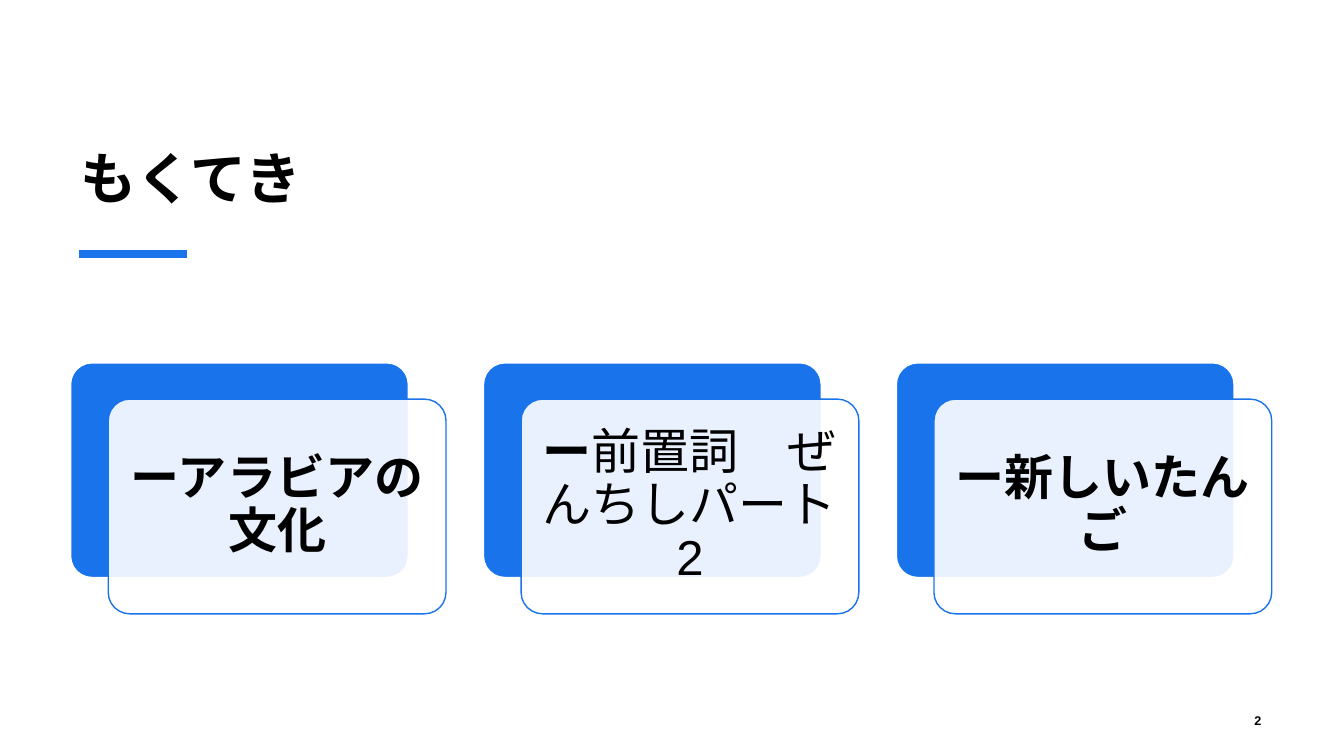
from dataclasses import dataclass

from lxml.etree import SubElement
from pptx import Presentation
from pptx.dml.color import RGBColor
from pptx.enum.lang import MSO_LANGUAGE_ID
from pptx.enum.shapes import MSO_CONNECTOR, MSO_SHAPE
from pptx.enum.text import MSO_ANCHOR, MSO_AUTO_SIZE, PP_ALIGN
from pptx.oxml.ns import qn
from pptx.util import Inches, Pt


@dataclass(frozen=True)
class Theme:
    font: str = "Arial"
    blue: RGBColor = RGBColor(0x19, 0x73, 0xEB)
    white: RGBColor = RGBColor(0xFF, 0xFF, 0xFF)
    black: RGBColor = RGBColor(0, 0, 0)
    title_size: int = 40
    card_size: int = 35
    number_size: int = 9
    card_opacity: int = 90
    card_corner: float = 0.1
    card_padding: float = 0.14


class SlideBuilder:
    """Draws on one slide; every place and size is a percentage of the slide."""

    def __init__(self, deck, theme):
        self.deck = deck
        self.theme = theme
        self.slide = deck.slides.add_slide(deck.slide_layouts.get_by_name("Title Only"))

    def area(self, left, top, width, height):
        across, down = self.deck.slide_width / 100, self.deck.slide_height / 100
        return int(left * across), int(top * down), int(width * across), int(height * down)

    def set_text(self, shape, spans, size, align, anchor):
        """Fills a shape with one paragraph of (text, bold) spans."""
        frame = shape.text_frame
        frame.word_wrap = True
        frame.auto_size = MSO_AUTO_SIZE.NONE
        frame.vertical_anchor = anchor
        para = frame.paragraphs[0]
        para.alignment = align
        for text, bold in spans:
            span = para.add_run()
            span.text = text
            span.font.name = self.theme.font
            span.font.size = Pt(size)
            span.font.bold = bold
            span.font.color.rgb = self.theme.black
            span.font.language_id = MSO_LANGUAGE_ID.JAPANESE
        return frame

    def title(self, text, place):
        title = self.slide.shapes.title
        title.left, title.top, title.width, title.height = self.area(*place)
        self.set_text(title, [(text, True)], self.theme.title_size, PP_ALIGN.LEFT, MSO_ANCHOR.BOTTOM)

    def accent_line(self, left, top, width):
        x, y, length, _ = self.area(left, top, width, 0)
        line = self.slide.shapes.add_connector(MSO_CONNECTOR.STRAIGHT, x, y, x + length, y)
        line.line.color.rgb = self.theme.blue
        line.line.width = Pt(6)
        SubElement(line._element.spPr, qn("a:effectLst"))

    def page_number(self, number, place):
        box = self.slide.shapes.add_textbox(*self.area(*place))
        self.set_text(box, [(str(number), True)], self.theme.number_size, PP_ALIGN.RIGHT, MSO_ANCHOR.MIDDLE)

    def panel(self, place, fill, outline):
        panel = self.slide.shapes.add_shape(MSO_SHAPE.ROUNDED_RECTANGLE, *self.area(*place))
        panel.adjustments[0] = self.theme.card_corner
        panel.shadow.inherit = False
        panel.fill.solid()
        panel.fill.fore_color.rgb = fill
        panel.line.color.rgb = outline
        panel.line.width = Pt(1)
        return panel

    def card(self, spans, place, offset):
        """Draws a blue panel with a translucent text panel shifted over it."""
        theme = self.theme
        left, top, width, height = place
        self.panel(place, theme.blue, theme.white)
        front = self.panel((left + offset[0], top + offset[1], width, height), theme.white, theme.blue)
        color = front._element.spPr.find(qn("a:solidFill"))[0]
        SubElement(color, qn("a:alpha"), val=str(theme.card_opacity * 1000))
        frame = self.set_text(front, spans, theme.card_size, PP_ALIGN.CENTER, MSO_ANCHOR.MIDDLE)
        frame.paragraphs[0].line_spacing = 0.9
        frame.margin_left = frame.margin_right = Inches(theme.card_padding)
        frame.margin_top = frame.margin_bottom = Inches(theme.card_padding)


def main():
    deck = Presentation()
    deck.slide_width, deck.slide_height = Inches(13.33), Inches(7.5)
    page = SlideBuilder(deck, Theme())
    page.title("もくてき", (5.25, 8.27, 89.35, 20.27))
    page.accent_line(5.85, 33.6, 8.03)
    page.page_number(2, (88.67, 92.67, 5.93, 5.33))

    goals = [
        [("ーアラビアの文化", True)],
        [("ー", True), ("前置詞　ぜんちしパート2", False)],
        [("ー新しいたんご", True)],
    ]
    first_left, pitch = 5.25, 30.72
    for column, spans in enumerate(goals):
        page.card(spans, (first_left + column * pitch, 48, 25.13, 28.4), (2.8, 4.8))

    deck.save("out.pptx")


if __name__ == "__main__":
    main()
